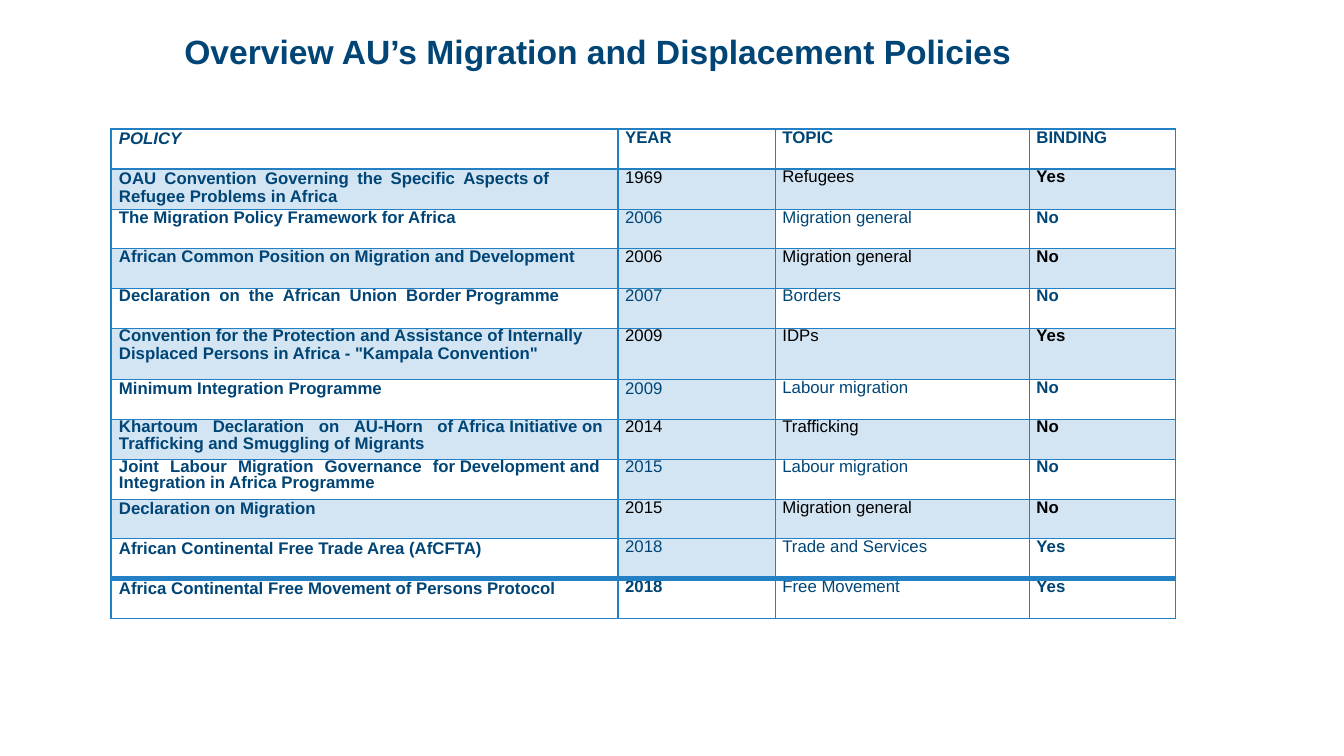
from lxml.etree import SubElement as Sub
from pptx import Presentation
from pptx.dml.color import RGBColor as Rgb
from pptx.oxml.ns import qn
from pptx.util import Inches, Pt

HUES = {"navy": "004575", "blue": "2480C4", "black": "000000"}
HEADS = ["POLICY", "YEAR", "TOPIC", "BINDING"]
RULES = [
    ("OAU Convention Governing the Specific Aspects of Refugee Problems in Africa", "1969", "Refugees", "Yes"),
    ("The Migration Policy Framework for Africa", "2006", "Migration general", "No"),
    ("African Common Position on Migration and Development", "2006", "Migration general", "No"),
    ("Declaration on the African Union Border Programme", "2007", "Borders", "No"),
    ("Convention for the Protection and Assistance of Internally Displaced Persons in Africa - \"Kampala Convention\"",
     "2009", "IDPs", "Yes"),
    ("Minimum Integration Programme", "2009", "Labour migration", "No"),
    ("Khartoum Declaration on AU-Horn of Africa Initiative on Trafficking and Smuggling of Migrants",
     "2014", "Trafficking", "No"),
    ("Joint Labour Migration Governance for Development and Integration in Africa Programme",
     "2015", "Labour migration", "No"),
    ("Declaration on Migration", "2015", "Migration general", "No"),
    ("African Continental Free Trade Area (AfCFTA)", "2018", "Trade and Services", "Yes"),
    ("Africa Continental Free Movement of Persons Protocol", "2018", "Free Movement", "Yes"),
]
PITCH = [
    (None, 13.2, 12.6), (None, 13.2, 12.6), (12.7, 12.6, 12.6), (11.9, 11.9, 11.9),
    (11.8, 11.8, 11.8), (12.2, 12.2, 12.2), (12.7, 13.2, 12.6), (11.8, 11.8, 11.8),
    (11.8, 11.8, 11.8), (13.7, 12.5, 12.5), (13.7, 12.5, 12.5), (13.7, 12.5, 12.5),
]
GAPS = {1: (5, 2.5), 4: (5, 3), 7: (4, 7), 8: (4, 4.5)}


def style(run, size, hue, bold):
    font = run.font
    font.name = "Arial"
    font.size = Pt(size)
    font.bold = bold
    font.color.rgb = Rgb.from_string(HUES[hue])


def border(cell, side, width):
    line = Sub(cell._tc.get_or_add_tcPr(), qn("a:ln" + side), w=str(Pt(width)))
    Sub(Sub(line, qn("a:solidFill")), qn("a:srgbClr"), val=HUES["blue"])


deck = Presentation()
deck.slide_width = Inches(13.33)
deck.slide_height = Inches(7.5)
slide = deck.slides.add_slide(deck.slide_layouts[6])

title = slide.shapes.add_textbox(Inches(1.73), Inches(0.3), Inches(9.75), Inches(0.55))
title.text_frame.word_wrap = True
title.text_frame.text = "Overview AU’s Migration and Displacement Policies"
para = title.text_frame.paragraphs[0]
para.line_spacing = 0.9
style(para.runs[0], 24, "navy", True)

rows = [HEADS] + RULES
last = len(rows) - 1
frame = slide.shapes.add_table(len(rows), 4, Inches(1.1), Inches(1.28), Inches(10.56), Inches(4.85))
table = frame.table
table.first_row = False
table.horz_banding = False
for col, width in zip(table.columns, [5.03, 1.56, 2.52, 1.45]):
    col.width = Inches(width)
for row in table.rows:
    row.height = Inches((4.85 - 0.51) / last)
table.rows[5].height = Inches(0.51)

for r, texts in enumerate(rows):
    for c, text in enumerate(texts):
        cell = table.cell(r, c)
        cell.margin_left = cell.margin_right = cell.margin_top = cell.margin_bottom = 0
        for side in "LRTB":
            width = 1
            if (r, side) in [(0, "B"), (1, "T")]:
                width = 2
            elif (r, side) in [(last - 1, "B"), (last, "T")]:
                width = 4
            border(cell, side, width)

        odd = r % 2 == 1 and r < last
        if odd or (c == 1 and 0 < r < last):
            cell.fill.solid()
            cell.fill.fore_color.rgb = Rgb.from_string(HUES["blue"])
            tint = cell._tc.tcPr.find(qn("a:solidFill"))[0]
            Sub(tint, qn("a:alpha"), val="20000")
        else:
            cell.fill.background()

        para = cell.text_frame.paragraphs[0]
        para._p.get_or_add_pPr().set("marL", str(Inches(0.07 if c else 0.08)))
        pitch = PITCH[r][min(c, 2)]
        if pitch:
            para.line_spacing = Pt(pitch)
        count, extra = GAPS.get(r, (0, 0)) if c == 0 else (0, 0)
        words = text.split(" ", count) if count else [text]
        for i, word in enumerate(words):
            if i:
                gap = para.add_run()
                gap.text = " "
                gap._r.get_or_add_rPr().set("spc", str(int(extra * 100)))
            para.add_run().text = word
        bold = r == 0 or c in (0, 3) or (r == last and c == 1)
        for run in para.runs:
            style(run, 12, "black" if odd and c else "navy", bold)
            run.font.italic = r == 0 and c == 0

deck.save("out.pptx")
